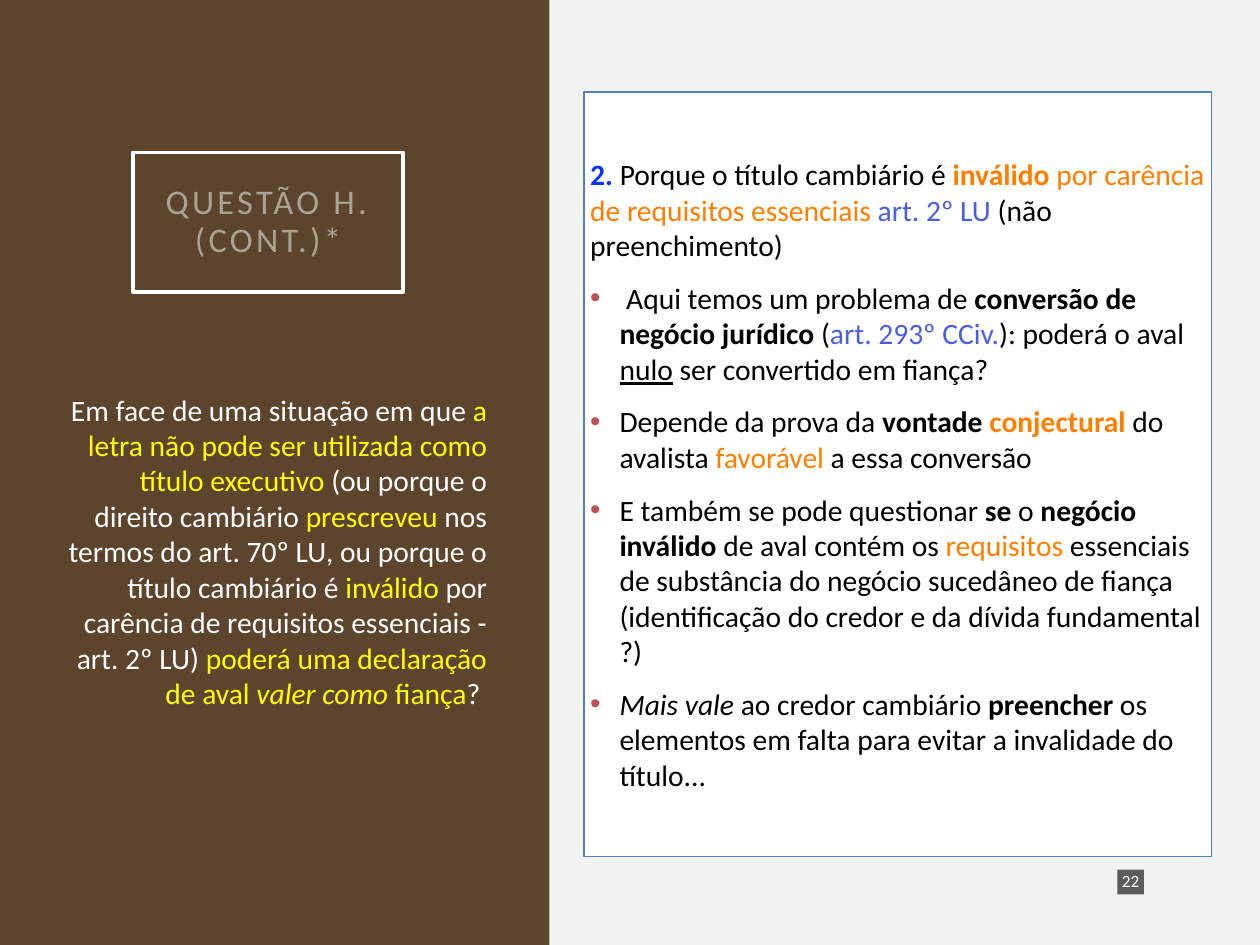
from lxml.etree import SubElement
from pptx import Presentation
from pptx.dml.color import RGBColor
from pptx.enum.shapes import MSO_SHAPE
from pptx.enum.text import MSO_ANCHOR, MSO_AUTO_SIZE, PP_ALIGN
from pptx.oxml.ns import qn
from pptx.util import Cm, Pt

COLORS = {
    "brown": "5D442C", "panel": "F2F2F2", "white": "FFFFFF", "border": "4F81BD",
    "title": "A9A393", "black": "000000", "number": "0433FF", "orange": "FF7E00",
    "law": "4A5DE6", "bullet": "C0504D", "yellow": "FFFF00", "badge": "1D1D1D",
}


def rgb(name):
    return RGBColor.from_string(COLORS[name])


def add_text(p, text, color="black", size=24, bold=False, italic=False, underline=False, spacing=0):
    r = p.add_run()
    r.text = text
    r.font.name = "Calibri"
    r.font.size = Pt(size)
    r.font.bold = bold
    r.font.italic = italic
    r.font.underline = underline
    r.font.color.rgb = rgb(color)
    if spacing:
        r.font._element.set("spc", str(spacing))


B = {"bold": True}
I = {"italic": True}
ORANGE = {"color": "orange"}
LAW = {"color": "law"}
WHITE = {"color": "white"}
YELLOW = {"color": "yellow"}

ANSWER = [
    [("2.", {"color": "number", **B}), (" Porque o título cambiário é ", {}),
     ("inválido", {**ORANGE, **B}), (" por carência de requisitos essenciais ", ORANGE),
     ("art. 2º LU ", LAW), ("(não preenchimento)", {})],
    [(" Aqui temos um problema de ", {}), ("conversão de negócio jurídico ", B), ("(", {}),
     ("art. 293º CCiv.", LAW), ("): poderá o aval ", {}), ("nulo", {"underline": True}),
     (" ser convertido em fiança?", {})],
    [("Depende da prova da ", {}), ("vontade ", B), ("conjectural ", {**ORANGE, **B}),
     ("do avalista ", {}), ("favorável", ORANGE), (" a essa conversão", {})],
    [("E também se pode questionar ", {}), ("se", B), (" o ", {}), ("negócio inválido", B),
     (" de aval contém os ", {}), ("requisitos", ORANGE),
     (" essenciais de substância do negócio sucedâneo de fiança "
      "(identificação do credor e da dívida fundamental ?)", {})],
    [("Mais vale ", I), ("ao credor cambiário ", {}), ("preencher", B),
     (" os elementos em falta para evitar a invalidade do título...", {})],
]
QUESTION = [
    ("Em face de uma situação em que ", WHITE),
    ("a letra não pode ser utilizada como título executivo ", YELLOW),
    ("(ou porque o direito cambiário ", WHITE), ("prescreveu", YELLOW),
    (" nos termos do art. 70º LU, ou porque o título cambiário é ", WHITE),
    ("inválido", YELLOW), (" por carência de requisitos essenciais - art. 2º LU) ", WHITE),
    ("poderá uma declaração de aval ", YELLOW), ("valer como", {**YELLOW, **I}),
    (" fiança", YELLOW), ("? ", WHITE),
]

prs = Presentation()
prs.slide_width, prs.slide_height = Cm(36.12), Cm(27.1)
s = prs.slides.add_slide(prs.slide_layouts[1])
s.background.fill.solid()
s.background.fill.fore_color.rgb = rgb("brown")

title, body = s.shapes.title, s.placeholders[1]
panel = s.shapes.add_shape(MSO_SHAPE.RECTANGLE, Cm(15.75), 0, Cm(20.37), prs.slide_height)
panel.shadow.inherit = False
panel.fill.solid()
panel.fill.fore_color.rgb = rgb("panel")
panel.line.fill.background()
body.element.addprevious(panel.element)

badge = s.shapes.add_shape(MSO_SHAPE.RECTANGLE, Cm(32.03), Cm(24.94), Cm(0.76), Cm(0.71))
badge.shadow.inherit = False
badge.fill.solid()
badge.fill.fore_color.rgb = rgb("badge")
SubElement(badge.fill._xPr.find(".//" + qn("a:srgbClr")), qn("a:alpha"), val="70000")
badge.line.fill.background()

question = s.shapes.add_textbox(Cm(1.52), Cm(11.05), Cm(12.62), Cm(9.25))

title.left, title.top, title.width, title.height = Cm(3.81), Cm(4.37), Cm(7.75), Cm(4.01)
body.left, body.top, body.width, body.height = Cm(16.74), Cm(2.64), Cm(17.98), Cm(21.92)
body.fill.solid()
body.fill.fore_color.rgb = rgb("white")
for sp, color, width in [(title, "white", 3), (body, "border", 1)]:
    sp.line.color.rgb = rgb(color)
    sp.line.width = Pt(width)

for sp, inset, anchor, align in [
    (title, 0.71, MSO_ANCHOR.MIDDLE, PP_ALIGN.CENTER),
    (body, 0.18, MSO_ANCHOR.MIDDLE, PP_ALIGN.LEFT),
    (badge, 0.08, MSO_ANCHOR.MIDDLE, PP_ALIGN.CENTER),
    (question, 0.18, MSO_ANCHOR.TOP, PP_ALIGN.RIGHT),
]:
    tf = sp.text_frame
    tf.word_wrap = True
    tf.auto_size = MSO_AUTO_SIZE.NONE
    tf.vertical_anchor = anchor
    tf.margin_left = tf.margin_right = tf.margin_top = tf.margin_bottom = Cm(inset)
    tf.paragraphs[0].alignment = align

p = title.text_frame.paragraphs[0]
p.line_spacing = 0.9
add_text(p, "QUESTÃO H.(CONT.)*", color="title", size=28, spacing=270)

p = badge.text_frame.paragraphs[0]
p.line_spacing = 0.9
add_text(p, "22", color="white", size=14)

p = question.text_frame.paragraphs[0]
for text, style in QUESTION:
    add_text(p, text, **style)

for i, runs in enumerate(ANSWER):
    p = body.text_frame.add_paragraph() if i else body.text_frame.paragraphs[0]
    p.space_before = Pt(14 if i else 0)
    pPr = p._p.get_or_add_pPr()
    indent = Cm(0.84) if i else 0
    pPr.set("marL", str(indent))
    pPr.set("indent", str(-indent))
    if i:
        SubElement(SubElement(pPr, qn("a:buClr")), qn("a:srgbClr"), val=COLORS["bullet"])
        SubElement(pPr, qn("a:buFont"), typeface="Arial")
        SubElement(pPr, qn("a:buChar"), char="•")
    else:
        SubElement(pPr, qn("a:buNone"))
    for text, style in runs:
        add_text(p, text, **style)

prs.save("out.pptx")
